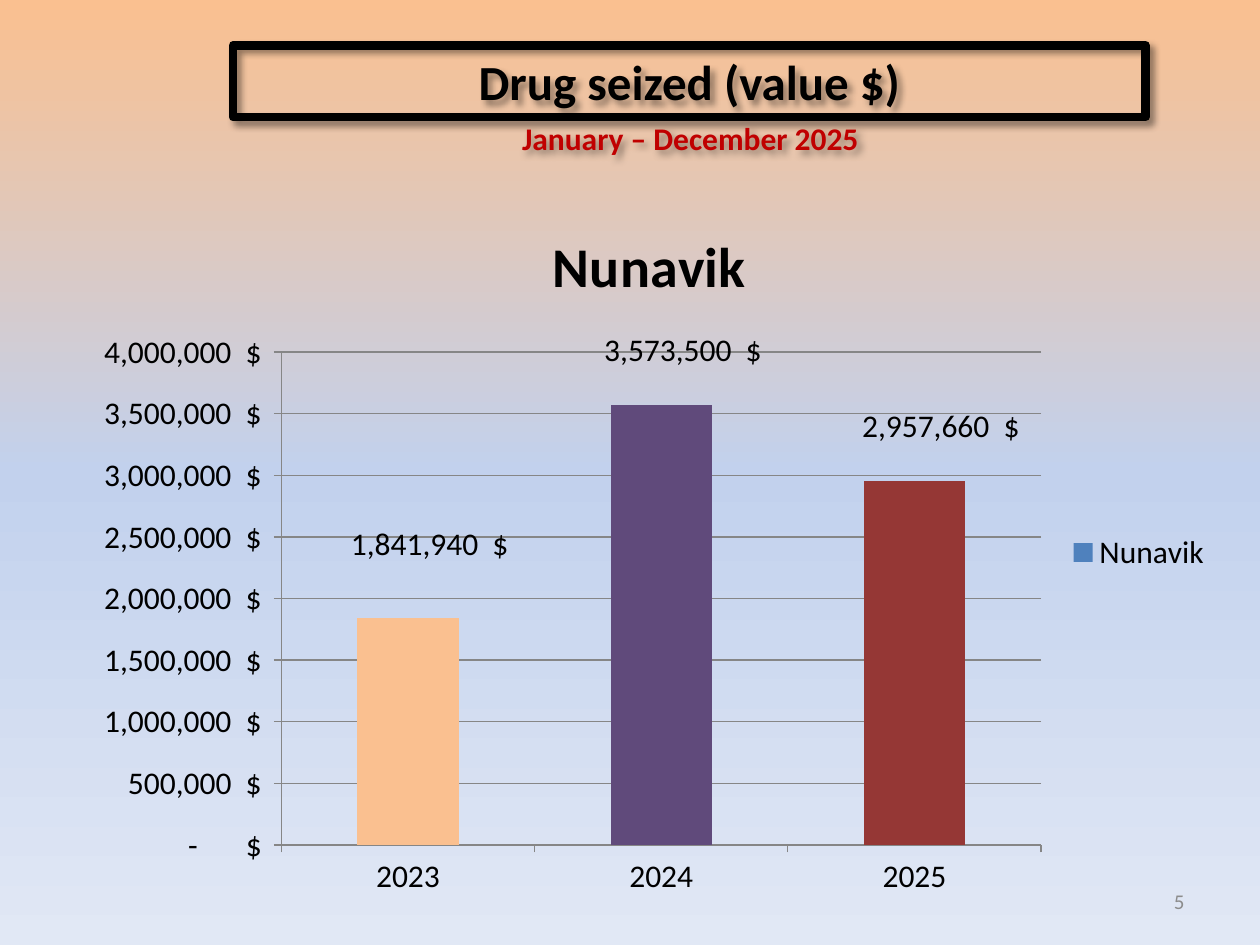
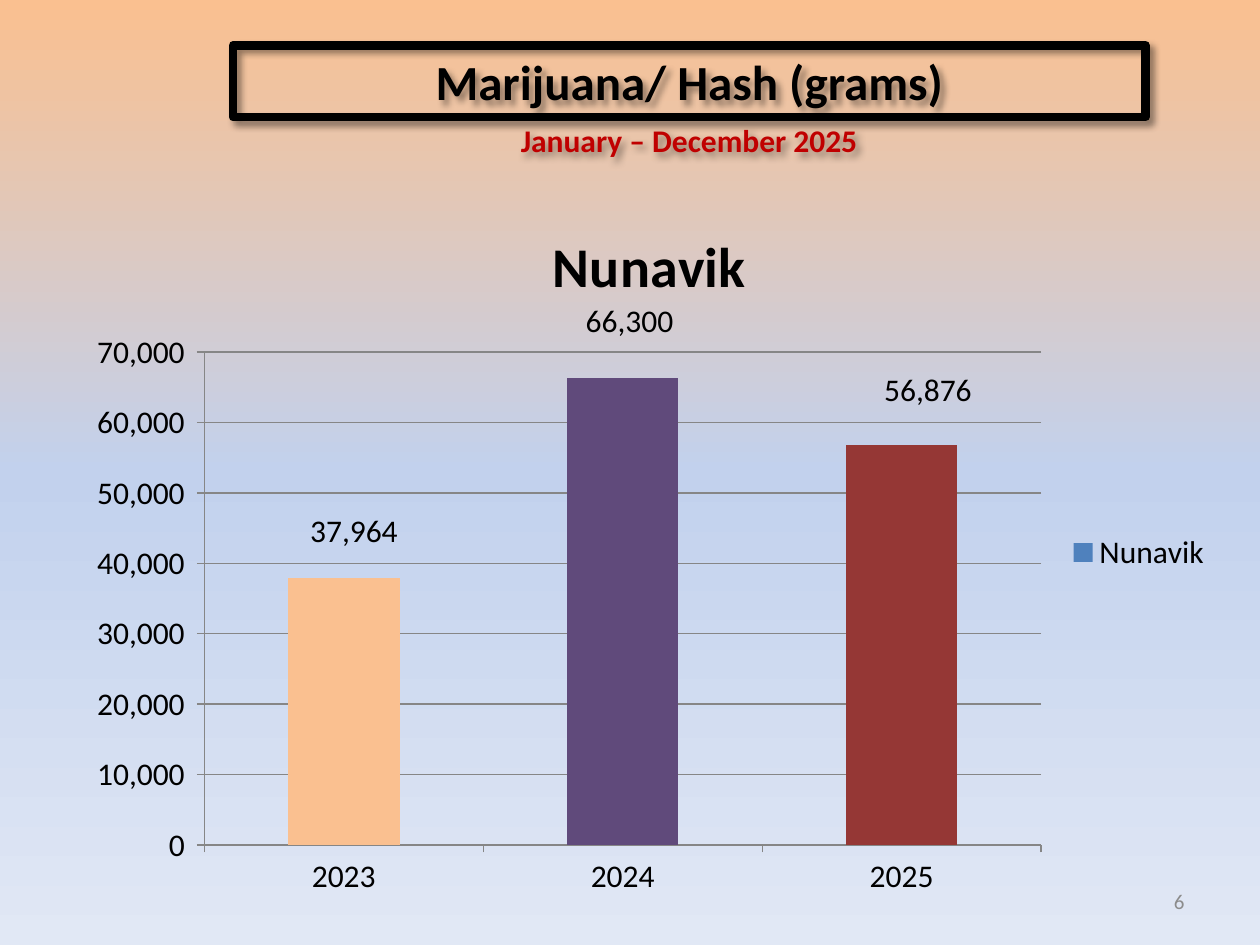
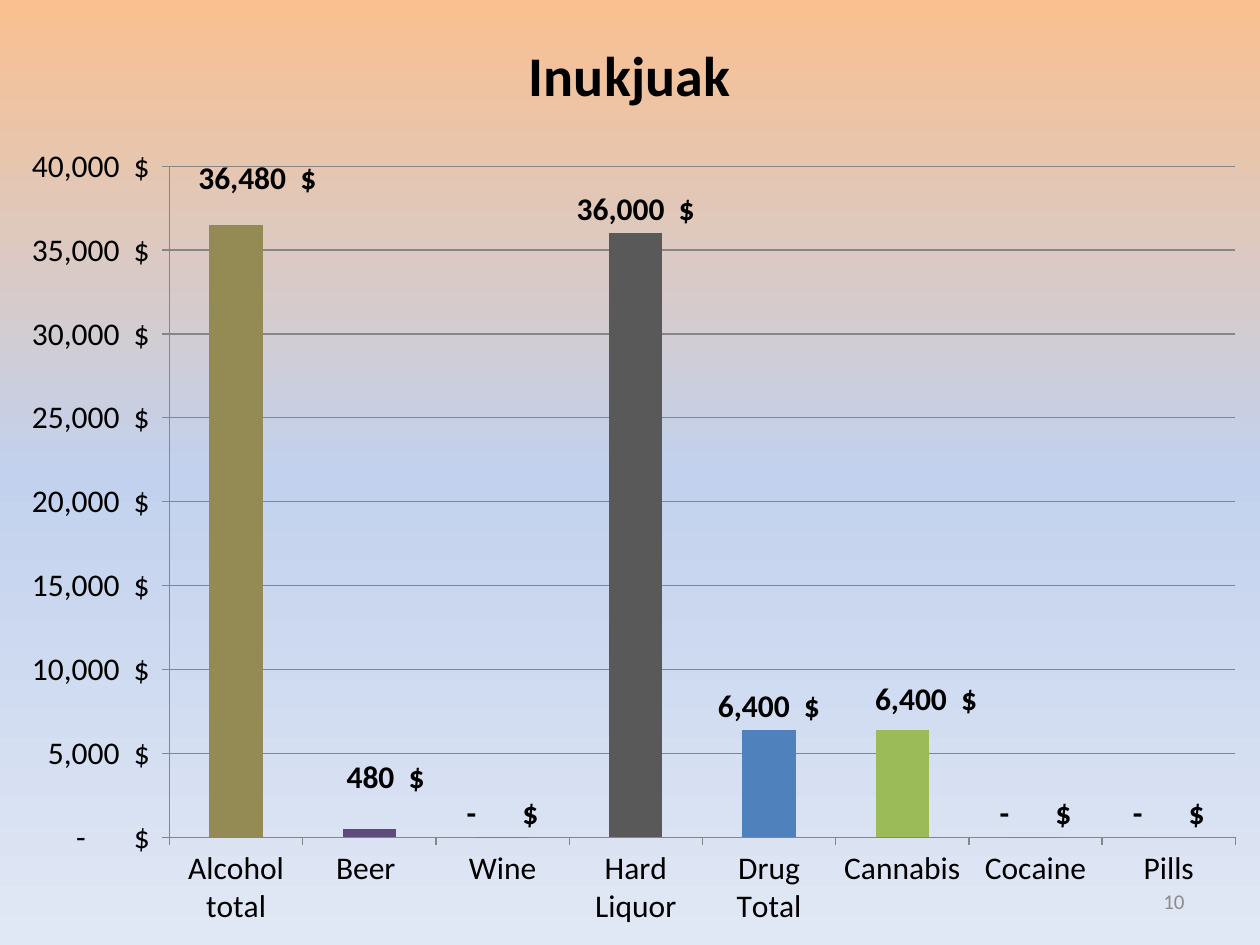
from copy import deepcopy

from lxml import etree
from pptx import Presentation
from pptx.chart.data import CategoryChartData
from pptx.dml.color import RGBColor
from pptx.enum.chart import XL_CHART_TYPE, XL_LABEL_POSITION, XL_LEGEND_POSITION, XL_TICK_MARK
from pptx.enum.shapes import MSO_SHAPE
from pptx.enum.text import MSO_ANCHOR, MSO_AUTO_SIZE, PP_ALIGN
from pptx.oxml import parse_xml
from pptx.oxml.ns import nsdecls, qn
from pptx.util import Inches, Pt

COLUMN = XL_CHART_TYPE.COLUMN_CLUSTERED
ABOVE = XL_LABEL_POSITION.OUTSIDE_END
RIGHT_SIDE = XL_LEGEND_POSITION.RIGHT
OUT, NO_TICK = XL_TICK_MARK.OUTSIDE, XL_TICK_MARK.NONE
RECT = MSO_SHAPE.RECTANGLE
MIDDLE, TOP = MSO_ANCHOR.MIDDLE, MSO_ANCHOR.TOP
GROW, FIXED = MSO_AUTO_SIZE.SHAPE_TO_FIT_TEXT, MSO_AUTO_SIZE.NONE
CENTER, RIGHT = PP_ALIGN.CENTER, PP_ALIGN.RIGHT

WIDTH, HEIGHT = Inches(10), Inches(7.5)
FONT = "Calibri"
BLACK, RED, GRAY, RULE, BLUE = "000000", "C00000", "8C8C8C", "868686", "4F81BD"
SKY = [(0, "FAC090"), (0.5, "C2D1ED"), (1, "E1E8F5")]
YEARS = ["2023", "2024", "2025"]
TINTS = ["FAC090", "604A7B", "953735"]
MONEY = '_ * #,##0_)\\ "$"_ ;_ * \\(#,##0\\)\\ "$"_ ;_ * "-"??_)\\ "$"_ ;_ @_ '
COUNT = "#,##0_);\\(#,##0\\)"
PERIOD = "January – December 2025"

FULL = (0, 0, 100, 100)
BODY = (5.9, 20.67, 91.3, 75.6)
BANNER = (18.5, 4.8, 72.4, 7.6)
FOOT = (71.7, 92.67, 23.3, 5.33)


def color(code):
    """Turn a hex string into a colour."""
    return RGBColor.from_string(code)


def place(box):
    """Turn a box in percent of the slide into lengths."""
    return [int(part * side / 100) for part, side in zip(box, (WIDTH, HEIGHT) * 2)]


def style(font, size, code=BLACK, bold=False):
    """Set the shared font with its size, colour and weight."""
    font.name, font.size, font.bold = FONT, Pt(size), bold
    font.color.rgb = color(code)


def write(shape, text, size, code, bold, align, anchor=TOP, fit=GROW):
    """Fill a shape with one styled paragraph."""
    frame = shape.text_frame
    frame.text = text
    frame.word_wrap, frame.auto_size = True, fit
    frame.vertical_anchor = anchor
    line = frame.paragraphs[0]
    line.alignment = align
    style(line.runs[0].font, size, code, bold)


def shade(shape):
    """Give a shape a soft shadow down to the right."""
    shape.shadow.inherit = False
    shape._element.spPr.find(qn("a:effectLst")).append(parse_xml(
        f'<a:outerShdw {nsdecls("a")} blurRad="{Pt(4)}" dist="{Pt(3)}" dir="2700000" '
        'algn="tl" rotWithShape="0"><a:srgbClr val="000000"><a:alpha val="40000"/>'
        '</a:srgbClr></a:outerShdw>'))


def paint(slide):
    """Fill the background with the vertical gradient."""
    fill = slide.background.fill
    fill.gradient()
    fill.gradient_angle = 270
    stops = slide.element.xpath(".//a:gsLst")[0]
    while len(stops) < len(SKY):
        stops.append(deepcopy(stops[0]))
    for stop, (spot, code) in zip(fill.gradient_stops, SKY):
        stop.position = spot
        stop.color.rgb = color(code)


def begin(deck):
    """Add a blank slide with its background and return it."""
    slide = deck.slides.add_slide(deck.slide_layouts[6])
    paint(slide)
    return slide


def foot(slide, number):
    """Write the slide number."""
    note = slide.shapes.add_textbox(*place(FOOT))
    write(note, str(number), 12, GRAY, False, RIGHT, MIDDLE, FIXED)


def head(slide, title, spot):
    """Draw the framed title and the period below it."""
    frame = slide.shapes.add_shape(RECT, *place(BANNER))
    frame.fill.background()
    frame.line.color.rgb = color(BLACK)
    frame.line.width = Pt(5)
    write(frame, title, 28, BLACK, True, CENTER)
    period = slide.shapes.add_textbox(*place((*spot, BANNER[2], 5.33)))
    write(period, PERIOD, 18, RED, True, CENTER)
    for shape in (frame, period):
        shade(shape)


def layout(shares, inner=False):
    """Build a manual chart layout from percent shares."""
    node = etree.Element(qn("c:layout"))
    manual = etree.SubElement(node, qn("c:manualLayout"))
    modes = [("layoutTarget", "inner"), ("xMode", "edge"), ("yMode", "edge")] if inner else []
    sizes = [(key, str(round(share / 100, 4))) for key, share in zip("xywh", shares)]
    for key, value in modes + sizes:
        etree.SubElement(manual, qn("c:" + key)).set("val", value)
    return node


def axes(chart, form, top, step):
    """Style both axes and the grid."""
    value, group = chart.value_axis, chart.category_axis
    value.minimum_scale, value.maximum_scale, value.major_unit = 0, top, step
    value.has_major_gridlines = True
    value.tick_labels.number_format = form
    value.tick_labels.number_format_is_linked = False
    for axis in (value, group):
        axis.major_tick_mark, axis.minor_tick_mark = OUT, NO_TICK
        style(axis.tick_labels.font, 18)
    for line in (value.format.line, group.format.line, value.major_gridlines.format.line):
        line.color.rgb = color(RULE)
        line.width = Pt(0.75)


def labels(series, form, bold, shifts):
    """Show values above the bars, moved by percent of the chart, without leader lines."""
    tags = series.data_labels
    tags.show_value, tags.position = True, ABOVE
    tags.number_format, tags.number_format_is_linked = form, False
    style(tags.font, 18, BLACK, bold)
    for index, shift in shifts.items():
        tag = series.points[index].data_label
        style(tag.font, 18, BLACK, bold)
        tag.position = ABOVE
        node = series._element.xpath(f'.//c:dLbl[c:idx/@val="{index}"]')[0]
        node.insert(1, layout(shift))
    for leader in series._element.xpath(".//c:showLeaderLines"):
        leader.set("val", "0")


def bars(slide, box, name, cats, values, tints, form, plot, scale, shifts, bold=False, key=True):
    """Draw a titled column chart with one colour for each bar."""
    data = CategoryChartData(number_format=form)
    data.categories = cats
    data.add_series(name, values)
    chart = slide.shapes.add_chart(COLUMN, *place(box), data).chart
    style(chart.font, 18)
    chart.has_title = True
    chart.chart_title.include_in_layout = False
    title = chart.chart_title.text_frame
    title.text = name
    style(title.paragraphs[0].runs[0].font, 32, BLACK, True)
    chart.has_legend = key
    if key:
        chart.legend.position = RIGHT_SIDE
        chart.legend.include_in_layout = False
        style(chart.legend.font, 18)
    axes(chart, form, *scale)
    group = chart.plots[0]
    group.gap_width, group.vary_by_categories = 150, False
    series = group.series[0]
    series.format.fill.solid()
    series.format.fill.fore_color.rgb = color(BLUE)
    for index, tint in enumerate(tints):
        fill = series.points[index].format.fill
        fill.solid()
        fill.fore_color.rgb = color(tint)
    labels(series, form, bold, shifts)
    area = chart._chartSpace.xpath(".//c:plotArea")[0]
    for old in area.findall(qn("c:layout")):
        area.remove(old)
    area.insert(0, layout(plot, True))


def region(deck, number, title, spot, values, form, plot, scale, shifts):
    """Build a slide with a framed title and the yearly chart."""
    slide = begin(deck)
    bars(slide, BODY, "Nunavik", YEARS, values, TINTS, form, plot, scale, shifts)
    head(slide, title, spot)
    foot(slide, number)


def village(deck, number):
    """Build the slide that one village chart fills."""
    slide = begin(deck)
    cats = ["Alcohol total", "Beer ", "Wine", "Hard Liquor",
            "Drug Total", "Cannabis", "Cocaine", "Pills"]
    values = [36480, 480, 0, 36000, 6400, 6400, 0, 0]
    tints = ["948A54", "604A7B", "953735", "595959", BLUE, "9BBB59", "8064A2", "F79646"]
    shifts = {0: (1.7, -2.4), 1: (1.3, -2.9), 5: (1.9, -0.7)}
    bars(slide, FULL, "Inukjuak", cats, values, tints, MONEY, (13.45, 17.6, 84.6, 71),
         (40000, 5000), shifts, bold=True, key=False)
    foot(slide, number)


def main():
    """Build and save the deck."""
    deck = Presentation()
    deck.slide_width, deck.slide_height = WIDTH, HEIGHT
    region(deck, 5, "Drug seized (value $)", (18.6, 11.93), [1841940, 3573500, 2957660], MONEY,
           (18, 21.95, 66.05, 69), (4000000, 500000),
           {0: (1.9, -6.9), 1: (1.9, -4.2), 2: (2.3, -4.3)})
    region(deck, 6, "Marijuana/ Hash (grams)", (18.5, 12.2), [37964, 66300, 56876], COUNT,
           (11.3, 21.95, 72.75, 69), (70000, 10000),
           {0: (1.2, -3.2), 1: (0.9, -4.6), 2: (2.6, -4.3)})
    village(deck, 10)
    deck.save("out.pptx")


if __name__ == "__main__":
    main()
